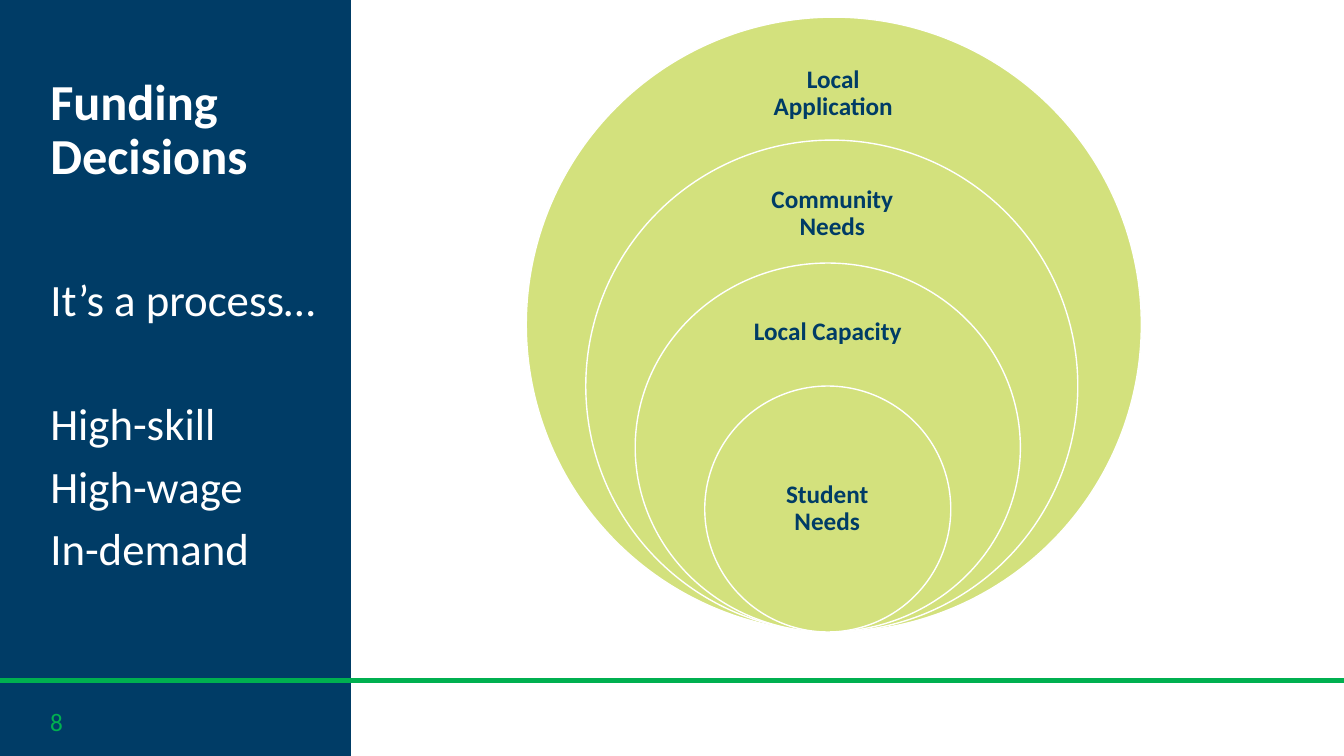
from pptx import Presentation
from pptx.dml.color import RGBColor
from pptx.enum import shapes, text
from pptx.oxml.ns import qn
from pptx.util import Inches, Pt
from lxml import etree

NAVY, GREEN, LIME, WHITE = "003C66", "00B050", "D3E17D", "FFFFFF"

# Content
TITLE = "Funding Decisions"
# text, space before in points
PROCESS = [("It’s a process…", 0), ("High-skill", 54), ("High-wage", 10), ("In-demand", 10)]
PAGE = "8"
# label, circle centre x, circle width, label box (left, top, width, height)
RINGS = [
    ("Local Application", 8.27, 6.1, (7.41, 0.47, 1.71, 0.92)),
    ("Community Needs", 8.25, 4.88, (7.4, 1.68, 1.71, 0.88)),
    ("Local Capacity", 8.21, 3.82, (7.32, 2.89, 1.78, 0.82)),
    ("Student Needs", 8.21, 2.44, (7.34, 4.44, 1.73, 1.22)),
]
RINGS_TOP, RINGS_BOTTOM, RING_STEP = 0.17, 6.27, 1.22

deck = Presentation()
deck.slide_width, deck.slide_height = Inches(13.33), Inches(7.5)
slide = deck.slides.add_slide(deck.slide_layouts[6])


def color(hex_value):
    return RGBColor.from_string(hex_value)


def add_filled(kind, box, fill, line=None):
    shape = slide.shapes.add_shape(kind, *map(Inches, box))
    shape.shadow.inherit = False
    shape.fill.solid()
    shape.fill.fore_color.rgb = color(fill)
    if line:
        shape.line.color.rgb = color(line)
        shape.line.width = Pt(1)
    else:
        shape.line.fill.background()


def add_text(box, lines, size, ink, bold=False, spacing=0.9, align=text.PP_ALIGN.LEFT,
             anchor=text.MSO_ANCHOR.TOP, inset=None):
    frame = slide.shapes.add_textbox(*map(Inches, box)).text_frame
    frame.word_wrap = True
    frame.vertical_anchor = anchor
    if inset:
        frame.margin_left = frame.margin_right = Inches(inset)
        frame.margin_top = frame.margin_bottom = Inches(inset)
    for i, (words, before) in enumerate(lines):
        paragraph = frame.add_paragraph() if i else frame.paragraphs[0]
        paragraph.text = words
        paragraph.alignment = align
        paragraph.line_spacing = spacing
        if before:
            paragraph.space_before = Pt(before)
        paragraph.font.name = "Calibri"
        paragraph.font.size = Pt(size)
        paragraph.font.bold = bold
        paragraph.font.color.rgb = color(ink)


# Side panel and footer rule
add_filled(shapes.MSO_SHAPE.RECTANGLE, (0, 0, 3.48, 7.5), NAVY)
footer_rule = slide.shapes.add_connector(
    shapes.MSO_CONNECTOR.STRAIGHT, Inches(13.33), Inches(6.75), 0, Inches(6.75))
footer_rule.line.color.rgb = color(GREEN)
footer_rule.line.width = Pt(3)
etree.SubElement(footer_rule._element.spPr, qn("a:effectLst"))

# Panel text
add_text((0.4, 0.71, 2.98, 1.54), [(TITLE, 0)], 36, WHITE, bold=True)
add_text((0.4, 2.71, 2.98, 3.71), PROCESS, 32, WHITE)
add_text((0.4, 6.96, 2.17, 0.4), [(PAGE, 0)], 18, GREEN, spacing=1.0)

# Nested circles resting on one bottom edge
for i, (label, center, width, label_box) in enumerate(RINGS):
    top = RINGS_TOP + i * RING_STEP
    add_filled(shapes.MSO_SHAPE.OVAL,
               (center - width / 2, top, width, RINGS_BOTTOM - top), LIME, WHITE)
    add_text(label_box, [(label, 0)], 18, NAVY, bold=True, align=text.PP_ALIGN.CENTER,
             anchor=text.MSO_ANCHOR.MIDDLE, inset=0.14)

deck.save("out.pptx")
